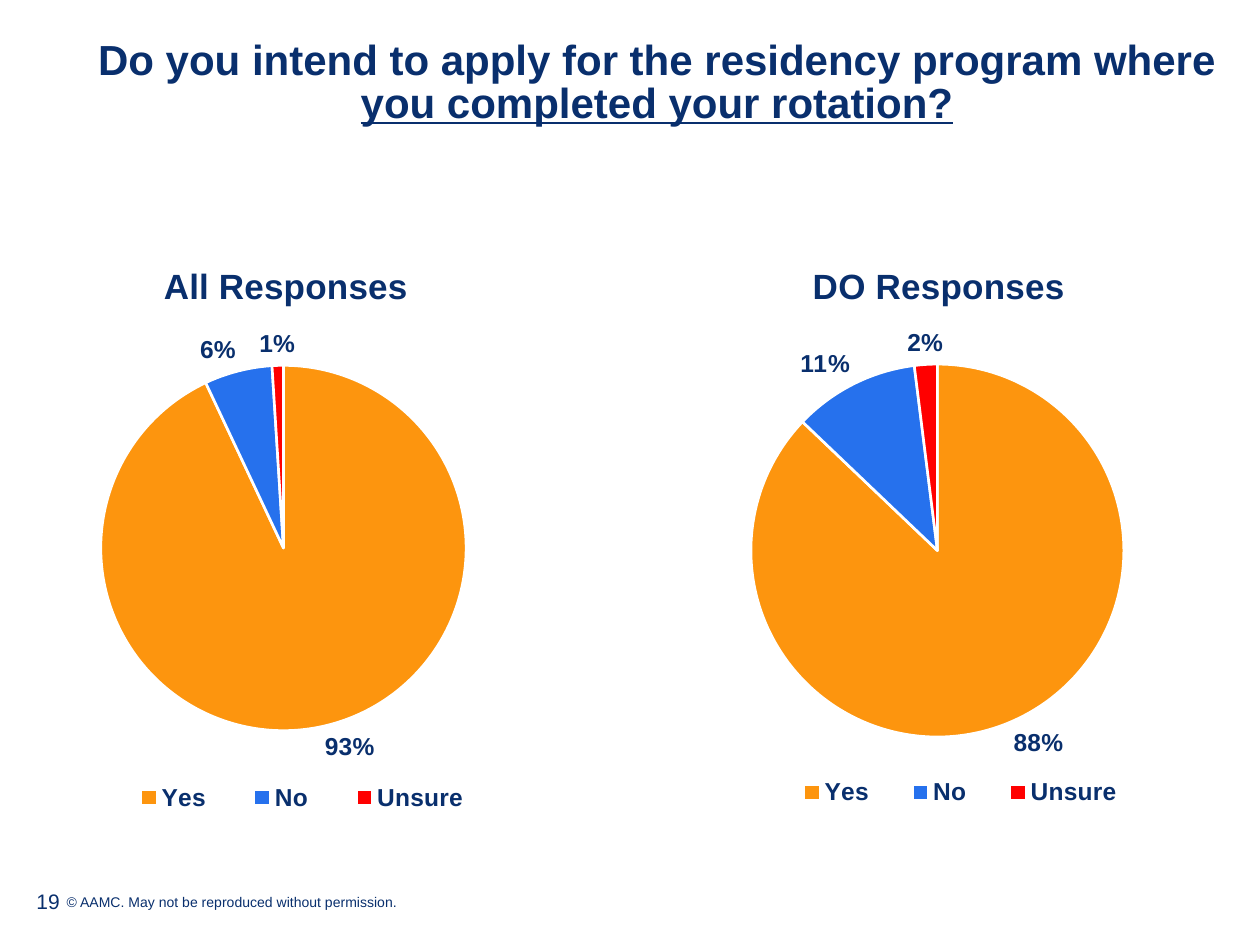
from lxml.etree import SubElement
from pptx import Presentation
from pptx.chart.data import CategoryChartData
from pptx.dml.color import RGBColor
from pptx.enum.chart import XL_CHART_TYPE, XL_LABEL_POSITION, XL_LEGEND_POSITION
from pptx.enum.text import MSO_ANCHOR, PP_ALIGN
from pptx.oxml import parse_xml
from pptx.oxml.ns import nsdecls, qn
from pptx.util import Inches, Pt

COLORS = {"navy": "092F6D", "Yes": "FD950E", "No": "2671ED",
          "Unsure": "FF0000", "white": "FFFFFF"}
CATEGORIES = ["Yes", "No", "Unsure"]
# Areas are left, top, width, height on the slide, in inches.
PIES = [
    {"title": "All Responses", "values": [93, 6, 1],
     "area": (-0.92, 1.85, 6.35, 4.73), "title_at": (1.25, 2.04),
     "plot": (0.8, 2.9, 2.9, 2.9), "legend": (0.8, 6.16, 3.2, 0.34)},
    {"title": "DO Responses", "values": [88, 11, 2],
     "area": (4.13, 1.85, 6.63, 4.73), "title_at": (6.4, 2.04),
     "plot": (5.96, 2.89, 2.96, 2.96), "legend": (6.1, 6.12, 3.05, 0.34)},
]


def color(name):
    return RGBColor.from_string(COLORS[name])


def format_font(font, size, **values):
    for name, value in {"name": "Arial", "size": Pt(size), **values}.items():
        setattr(font, name, value)
    font.color.rgb = color("navy")


def add_text(slide, area, runs, size, frame_format=None, paragraph_format=None):
    """Add one paragraph made of (text, font values) runs."""
    frame = slide.shapes.add_textbox(*map(Inches, area)).text_frame
    for name, value in {"word_wrap": True, **(frame_format or {})}.items():
        setattr(frame, name, value)
    paragraph = frame.paragraphs[0]
    for name, value in (paragraph_format or {}).items():
        setattr(paragraph, name, value)
    for text, values in runs:
        run = paragraph.add_run()
        run.text = text
        format_font(run.font, size, **values)


def place(element, position, chart_area, index):
    """Give a chart part a manual layout from its place on the slide."""
    for old_layout in element.findall(qn("c:layout")):
        element.remove(old_layout)
    layout = parse_xml(f"<c:layout {nsdecls('c')}><c:manualLayout/></c:layout>")
    manual = layout[0]
    if element.tag == qn("c:plotArea"):
        SubElement(manual, qn("c:layoutTarget"), val="inner")
    left, top, width, height = chart_area
    origins, spans = (left, top, 0, 0), (width, height, width, height)
    parts = list(zip("xywh", position, origins, spans))
    for name, *_ in parts[:2]:
        SubElement(manual, qn(f"c:{name}Mode"), val="edge")
    for name, value, origin, span in parts:
        SubElement(manual, qn(f"c:{name}"), val=f"{(value - origin) / span:.4f}")
    element.insert(index, layout)


def add_pie(slide, pie):
    chart_data = CategoryChartData()
    chart_data.categories = CATEGORIES
    chart_data.add_series(pie["title"], pie["values"])
    chart = slide.shapes.add_chart(
        XL_CHART_TYPE.PIE, *map(Inches, pie["area"]), chart_data).chart
    format_font(chart.font, 10)

    chart.has_title = True
    paragraph = chart.chart_title.text_frame.paragraphs[0]
    run = paragraph.add_run()
    run.text = pie["title"]
    format_font(run.font, 20, bold=True)

    chart.has_legend = True
    chart.legend.position = XL_LEGEND_POSITION.BOTTOM
    chart.legend.include_in_layout = False
    format_font(chart.legend.font, 14, bold=True)

    plot = chart.plots[0]
    plot.vary_by_categories = True
    plot.has_data_labels = True
    labels = plot.data_labels
    for name, value in {"show_value": True, "number_format": '0"%"',
                        "number_format_is_linked": False,
                        "position": XL_LABEL_POSITION.OUTSIDE_END}.items():
        setattr(labels, name, value)
    format_font(labels.font, 14, bold=True)

    for index, category in enumerate(CATEGORIES):
        slice_format = plot.series[0].points[index].format
        slice_format.fill.solid()
        slice_format.fill.fore_color.rgb = color(category)
        slice_format.line.color.rgb = color("white")
        slice_format.line.width = Pt(1.5)

    chart_element = chart._chartSpace.find(qn("c:chart"))
    for tag, key, index in (("c:title", "title_at", 1), ("c:plotArea", "plot", 0),
                            ("c:legend", "legend", 1)):
        place(chart_element.find(qn(tag)), pie[key], pie["area"], index)


def main():
    presentation = Presentation()
    presentation.slide_width, presentation.slide_height = Inches(10), Inches(7.5)
    slide = presentation.slides.add_slide(presentation.slide_layouts[6])

    margins = dict.fromkeys(
        ("margin_left", "margin_top", "margin_right", "margin_bottom"), 0)
    add_text(slide, (0.63, 0.33, 9.17, 0.68),
             [("Do you intend to apply for the residency program where ", {"bold": True}),
              ("you completed your rotation?", {"bold": True, "underline": True})],
             24, {"vertical_anchor": MSO_ANCHOR.BOTTOM, **margins},
             {"alignment": PP_ALIGN.CENTER, "line_spacing": 0.85})
    add_text(slide, (0.43, 7.04, 8.22, 0.23),
             [("© AAMC. May not be reproduced without permission.", {})], 8)
    add_text(slide, (0.19, 6.95, 2.25, 0.4), [("19", {})], 12,
             {"vertical_anchor": MSO_ANCHOR.MIDDLE})
    for pie in PIES:
        add_pie(slide, pie)
    presentation.save("out.pptx")


if __name__ == "__main__":
    main()
